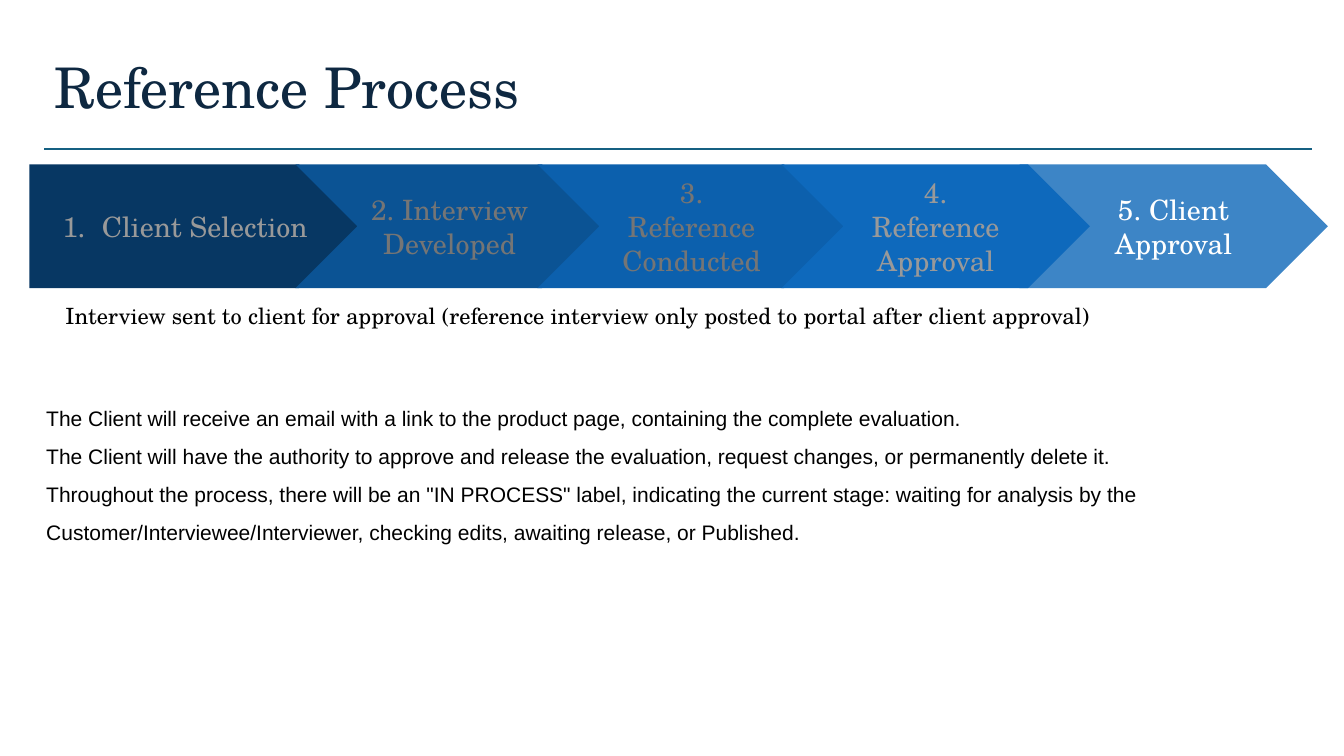
import copy

import pptx
import pptx.dml.color
import pptx.enum.shapes
import pptx.enum.text
import pptx.oxml.ns
import pptx.util
from lxml import etree

Inches = pptx.util.Inches
Pt = pptx.util.Pt
ALIGN = pptx.enum.text.PP_ALIGN
ANCHOR = pptx.enum.text.MSO_ANCHOR
SHAPE = pptx.enum.shapes.MSO_SHAPE
qn = pptx.oxml.ns.qn

SERIF = "TeX Gyre Schola"
COLORS = {
    "title": "0E2841",
    "rule": "156082",
    "text": "000000",
    "light_gray": "999999",
    "dark_gray": "757575",
    "white": "FFFFFF",
    "selection": "073763",
    "interview": "0B5394",
    "conducted": "0C60AD",
    "reference": "0E69BC",
    "client": "3D85C6",
}
STEPS = [
    ("Client Selection", 0, 3.29, "selection", "light_gray"),
    ("2. Interview Developed", 2.64, 3.06, "interview", "dark_gray"),
    ("3. Reference Conducted", 5.04, 3.06, "conducted", "dark_gray"),
    ("5. Client Approval", 9.82, 3.06, "client", "white"),
    ("4. Reference Approval", 7.46, 3.06, "reference", "light_gray"),
]
APPROVAL_NOTE = (
    "Interview sent to client for approval "
    "(reference interview only posted to portal after client approval)"
)
APPROVAL_DETAILS = [
    "The Client will receive an email with a link to the product page, "
    "containing the complete evaluation.",
    "The Client will have the authority to approve and release the evaluation, "
    "request changes, or permanently delete it.",
    'Throughout the process, there will be an "IN PROCESS" label, indicating '
    "the current stage: waiting for analysis by the "
    "Customer/Interviewee/Interviewer, checking edits, awaiting release, "
    "or Published.",
]


def rgb(name):
    return pptx.dml.color.RGBColor.from_string(COLORS[name])


def write(shape, text, size, color, font, inset, anchor, align=ALIGN.LEFT):
    frame = shape.text_frame
    frame.word_wrap = True
    frame.auto_size = pptx.enum.text.MSO_AUTO_SIZE.NONE
    frame.vertical_anchor = anchor
    frame.margin_left = frame.margin_right = Inches(inset)
    frame.margin_top = frame.margin_bottom = Inches(inset)
    paragraph = frame.paragraphs[0]
    paragraph.text = text
    paragraph.alignment = align
    for run in paragraph.runs:
        run.font.name = font
        run.font.size = Pt(size)
        run.font.color.rgb = rgb(color)
    return paragraph


def add_heading(slide, left, top, width, height):
    rule_y = Inches(top + height + 0.08)
    rule = slide.shapes.add_connector(
        pptx.enum.shapes.MSO_CONNECTOR.STRAIGHT,
        Inches(left), rule_y, Inches(left + width), rule_y)
    rule.line.color.rgb = rgb("rule")
    rule.line.width = Pt(1.5)
    etree.SubElement(rule._element.spPr, qn("a:effectLst"))

    title = slide.shapes.title
    title.left, title.top = Inches(left), Inches(top)
    title.width, title.height = Inches(width), Inches(height)
    heading = write(title, "Reference Process", 40, "title", SERIF, 0.1, ANCHOR.MIDDLE)
    heading.line_spacing = 0.9
    title.text_frame.margin_top = title.text_frame.margin_bottom = Inches(0.05)


def number_step(paragraph, color):
    properties = paragraph._p.get_or_add_pPr()
    properties.set("marL", str(Inches(0.5)))
    properties.set("indent", str(Inches(-0.39)))
    number_color = etree.SubElement(properties, qn("a:buClr"))
    etree.SubElement(number_color, qn("a:srgbClr"), val=COLORS[color])
    etree.SubElement(properties, qn("a:buFont"), typeface=SERIF)
    etree.SubElement(properties, qn("a:buAutoNum"), type="arabicPeriod")


def add_process(slide, left, top, height):
    for position, (label, offset, width, fill, color) in enumerate(STEPS):
        outline = SHAPE.CHEVRON if position else SHAPE.PENTAGON
        step = slide.shapes.add_shape(
            outline, Inches(left + offset), Inches(top), Inches(width), Inches(height))
        step.adjustments[0] = 0.5
        step.shadow.inherit = False
        step.fill.solid()
        step.fill.fore_color.rgb = rgb(fill)
        step.line.fill.background()
        paragraph = write(
            step, label, 20, color, SERIF, 0.13, ANCHOR.MIDDLE, ALIGN.CENTER)
        if position == 0:
            number_step(paragraph, color)


def add_note(slide, left, top, width, height):
    note = slide.shapes.add_textbox(
        Inches(left), Inches(top), Inches(width), Inches(height))
    write(note, APPROVAL_NOTE, 16, "text", SERIF, 0.13, ANCHOR.TOP)


def add_details(slide, left, top, width, height):
    details = slide.shapes.add_textbox(
        Inches(left), Inches(top), Inches(width), Inches(height))
    paragraph = write(
        details, "\v".join(APPROVAL_DETAILS), 15, "text", "Arial", 0.1, ANCHOR.TOP)
    paragraph.line_spacing = 1.5
    paragraph.space_before = paragraph.space_after = Pt(12)
    details.text_frame.auto_size = pptx.enum.text.MSO_AUTO_SIZE.SHAPE_TO_FIT_TEXT
    run_format = paragraph.runs[0]._r.rPr
    for line_break in paragraph._p.findall(qn("a:br")):
        line_break.insert(0, copy.deepcopy(run_format))


def main():
    deck = pptx.Presentation()
    deck.slide_width, deck.slide_height = Inches(13.33), Inches(7.5)
    slide = deck.slides.add_slide(deck.slide_layouts[5])
    add_heading(slide, 0.44, 0.4, 12.57, 1)
    add_process(slide, 0.29, 1.63, 1.23)
    add_note(slide, 0.52, 2.87, 12.57, 0.49)
    add_details(slide, 0.36, 3.8, 11.15, 1.59)
    deck.save("out.pptx")


if __name__ == "__main__":
    main()
